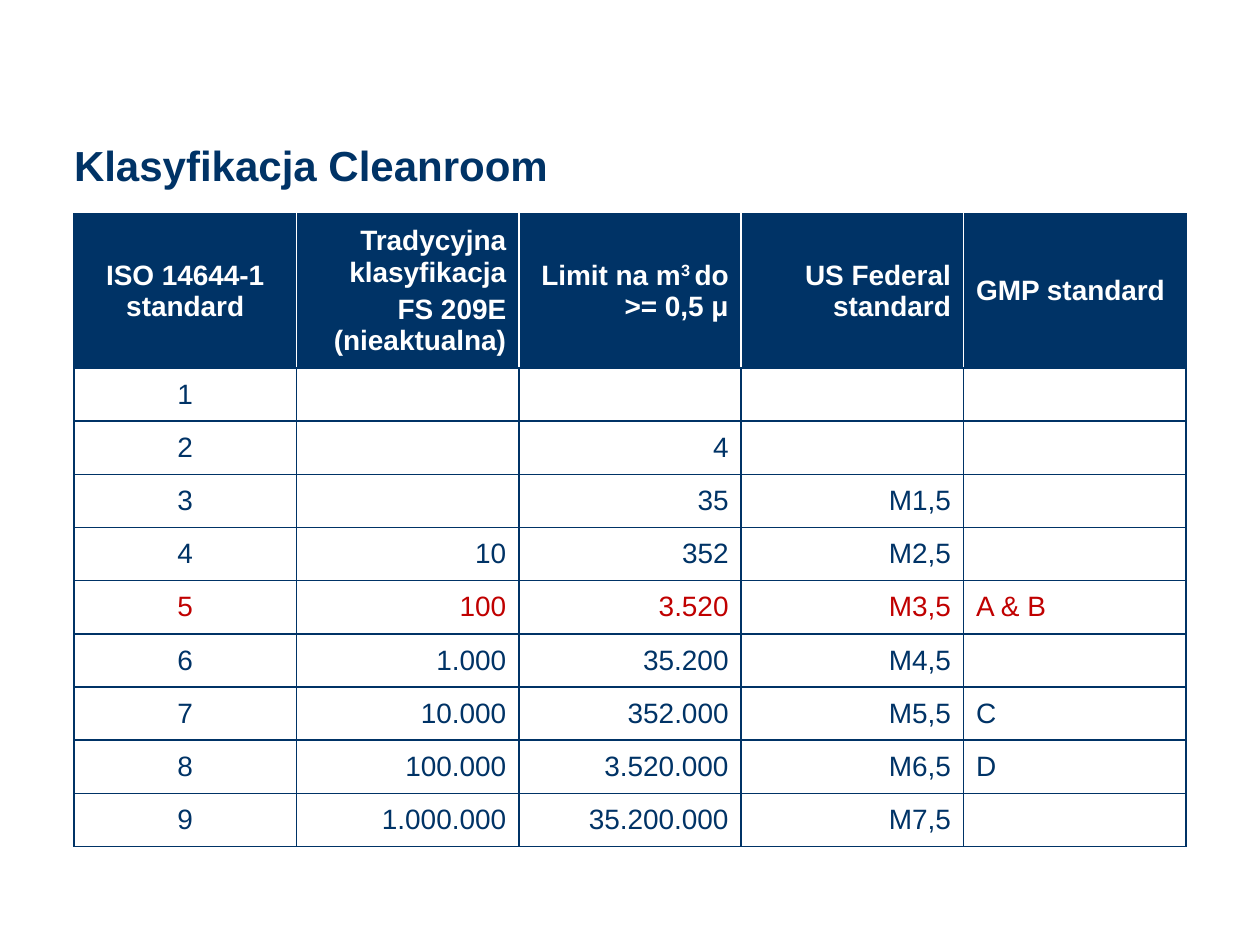
"""Build the cleanroom classification slide."""
from lxml.etree import SubElement
from pptx import Presentation
from pptx.dml.color import RGBColor
from pptx.enum.text import MSO_ANCHOR as ANCHOR, PP_ALIGN as AL
from pptx.oxml.ns import qn
from pptx.util import Pt

NAVY = RGBColor(0x00, 0x33, 0x66)
RED = RGBColor(0xC0, 0x00, 0x00)
WHITE = RGBColor(0xFF, 0xFF, 0xFF)
FONT = "Arial"
SCALE = 914400 / 126

TITLE = "Klasyfikacja Cleanroom"
HEADER = [
    [["ISO 14644-1 standard"]],
    [["Tradycyjna klasyfikacja"], ["FS 209E (nieaktualna)"]],
    [["Limit na m", "3 ", "do >= 0,5 μ"]],
    [["US Federal standard"]],
    [["GMP standard"]],
]
SUPERSCRIPT = "3 "
ROWS = [
    ("1", "", "", "", ""),
    ("2", "", "4", "", ""),
    ("3", "", "35", "M1,5", ""),
    ("4", "10", "352", "M2,5", ""),
    ("5", "100", "3.520", "M3,5", "A & B"),
    ("6", "1.000", "35.200", "M4,5", ""),
    ("7", "10.000", "352.000", "M5,5", "C"),
    ("8", "100.000", "3.520.000", "M6,5", "D"),
    ("9", "1.000.000", "35.200.000", "M7,5", ""),
]
HIGHLIGHT = "5"
ALIGNS = [AL.CENTER, AL.RIGHT, AL.RIGHT, AL.RIGHT, AL.LEFT]
LEFT, WIDTH = 74, 1112
TITLE_TOP, TITLE_H = 135, 59
TABLE_TOP, TABLE_H, HEAD_H = 214, 633, 154


def px(n):
    return round(n * SCALE)


def style(font, size, color, bold):
    font.name, font.size, font.bold = FONT, Pt(size), bold
    font.color.rgb = color


def set_borders(cell, colors):
    tcPr = cell._tc.get_or_add_tcPr()
    for side, color in zip("LRTB", colors):
        ln = SubElement(tcPr, qn(f"a:ln{side}"), w=str(Pt(1)))
        fill = SubElement(ln, qn("a:solidFill"))
        SubElement(fill, qn("a:srgbClr"), val=str(color))


def fill_cell(cell, paragraphs, align, color, bold):
    cell.vertical_anchor = ANCHOR.MIDDLE
    tf = cell.text_frame
    for i, runs in enumerate(paragraphs):
        p = tf.add_paragraph() if i else tf.paragraphs[0]
        p.alignment = align
        p.font.size = Pt(16)
        if i:
            p.space_before = Pt(3.5)
        for text in filter(None, runs):
            r = p.add_run()
            r.text = text
            style(r.font, 16, color, bold)
            if text == SUPERSCRIPT:
                r._r.get_or_add_rPr().set("baseline", "30000")


def add_title(slide):
    sp = slide.shapes.title
    sp.left, sp.top, sp.width, sp.height = map(px, (LEFT, TITLE_TOP, WIDTH, TITLE_H))
    tf = sp.text_frame
    tf.margin_left = tf.margin_right = tf.margin_top = tf.margin_bottom = 0
    tf.vertical_anchor = ANCHOR.MIDDLE
    p = tf.paragraphs[0]
    p.alignment = AL.LEFT
    r = p.add_run()
    r.text = TITLE
    style(r.font, 24, NAVY, True)


def add_classes(slide):
    n = len(HEADER)
    box = map(px, (LEFT, TABLE_TOP, WIDTH, TABLE_H))
    table = slide.shapes.add_table(len(ROWS) + 1, n, *box).table
    table.first_row = table.horz_banding = False
    for col in table.columns:
        col.width = px(WIDTH / n)
    for i, row in enumerate(table.rows):
        row.height = px((TABLE_H - HEAD_H) / len(ROWS) if i else HEAD_H)
    for c, (paragraphs, align) in enumerate(zip(HEADER, ALIGNS)):
        cell = table.cell(0, c)
        set_borders(cell, (WHITE if c else NAVY, WHITE if c < n - 1 else NAVY, NAVY, NAVY))
        cell.fill.solid()
        cell.fill.fore_color.rgb = NAVY
        fill_cell(cell, paragraphs, align, WHITE, True)
    for i, values in enumerate(ROWS, 1):
        color = RED if values[0] == HIGHLIGHT else NAVY
        for c, (text, align) in enumerate(zip(values, ALIGNS)):
            cell = table.cell(i, c)
            set_borders(cell, [NAVY] * 4)
            cell.fill.background()
            fill_cell(cell, [[text]], align, color, False)


def main():
    prs = Presentation()
    prs.slide_width, prs.slide_height = px(1260), px(945)
    slide = prs.slides.add_slide(prs.slide_layouts[5])
    add_title(slide)
    add_classes(slide)
    prs.save("out.pptx")


if __name__ == "__main__":
    main()
